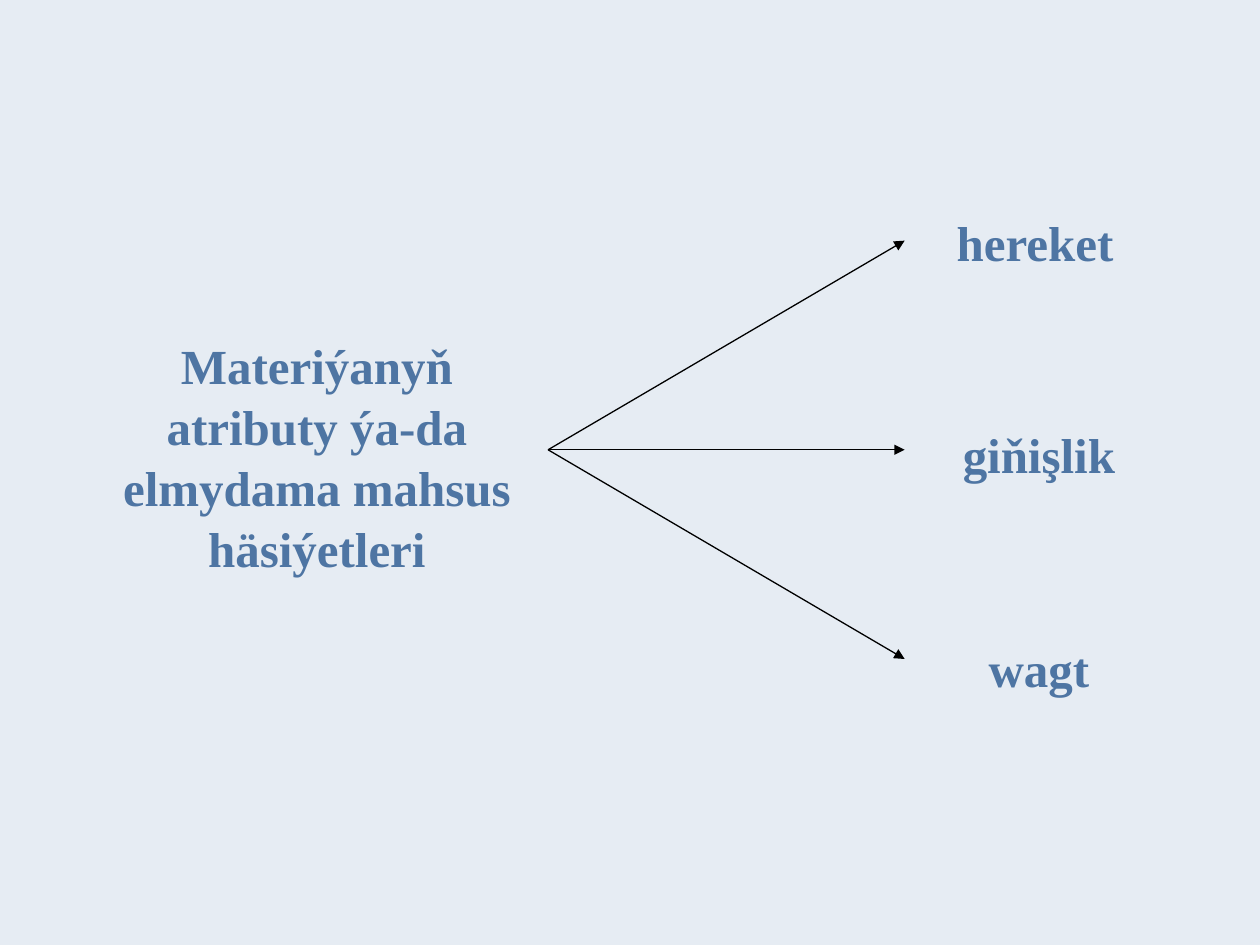
from dataclasses import dataclass

from lxml.etree import SubElement
from pptx import Presentation
from pptx.dml.color import RGBColor
from pptx.enum.shapes import MSO_CONNECTOR as Connector
from pptx.enum.text import MSO_ANCHOR as Anchor, PP_ALIGN as Align
from pptx.oxml.ns import qn
from pptx.slide import Slide
from pptx.util import Inches, Pt


@dataclass(frozen=True)
class Theme:
    background: RGBColor = RGBColor(0xE6, 0xEC, 0xF3)
    text: RGBColor = RGBColor(0x4E, 0x75, 0xA3)
    line: RGBColor = RGBColor(0, 0, 0)
    font: str = "Times New Roman"
    text_size: Pt = Pt(28)
    line_width: Pt = Pt(0.75)
    line_spacing: float = 1.04


@dataclass(frozen=True)
class Label:
    text: str
    left: float
    top: float
    width: float
    height: float


THEME = Theme()
SUBJECT = Label("Materiýanyň atributy ýa-da elmydama mahsus häsiýetleri",
                0.8, 2.57, 3.43, 2.05)
ATTRIBUTES = [
    Label("hereket", 7.41, 1.6, 1.61, 0.6),
    Label("giňişlik", 7.44, 3.28, 1.61, 0.6),
    Label("wagt", 7.44, 4.98, 1.61, 0.58),
]
FAN_LEFT, FAN_RIGHT, FAN_MIDDLE, FAN_STEP = 4.35, 7.18, 3.57, 1.66


def add_label(slide: Slide, label: Label) -> None:
    box = slide.shapes.add_textbox(Inches(label.left), Inches(label.top),
                                   Inches(label.width), Inches(label.height))
    frame = box.text_frame
    frame.word_wrap = True
    frame.vertical_anchor = Anchor.TOP
    frame.margin_top = Inches(0.07)
    frame.text = label.text
    paragraph = frame.paragraphs[0]
    paragraph.alignment = Align.CENTER
    paragraph.line_spacing = THEME.line_spacing
    font = paragraph.runs[0].font
    font.name = THEME.font
    font.size = THEME.text_size
    font.bold = True
    font.color.rgb = THEME.text


def add_arrow(slide: Slide, end_y: float) -> None:
    arrow = slide.shapes.add_connector(
        Connector.STRAIGHT, Inches(FAN_LEFT), Inches(FAN_MIDDLE),
        Inches(FAN_RIGHT), Inches(end_y))
    arrow.line.color.rgb = THEME.line
    arrow.line.width = THEME.line_width
    properties = arrow.element.spPr
    SubElement(properties.find(qn("a:ln")), qn("a:tailEnd"), type="triangle")
    SubElement(properties, qn("a:effectLst"))


def main() -> None:
    presentation = Presentation()
    presentation.slide_width = Inches(10)
    presentation.slide_height = Inches(7.5)
    slide = presentation.slides.add_slide(presentation.slide_layouts[6])
    fill = slide.background.fill
    fill.solid()
    fill.fore_color.rgb = THEME.background

    # Subject and its attributes
    for label in [SUBJECT, *ATTRIBUTES]:
        add_label(slide, label)

    # Arrows fanning out evenly from the subject
    for step in (0, -1, 1):
        add_arrow(slide, FAN_MIDDLE + step * FAN_STEP)

    presentation.save("out.pptx")


if __name__ == "__main__":
    main()
